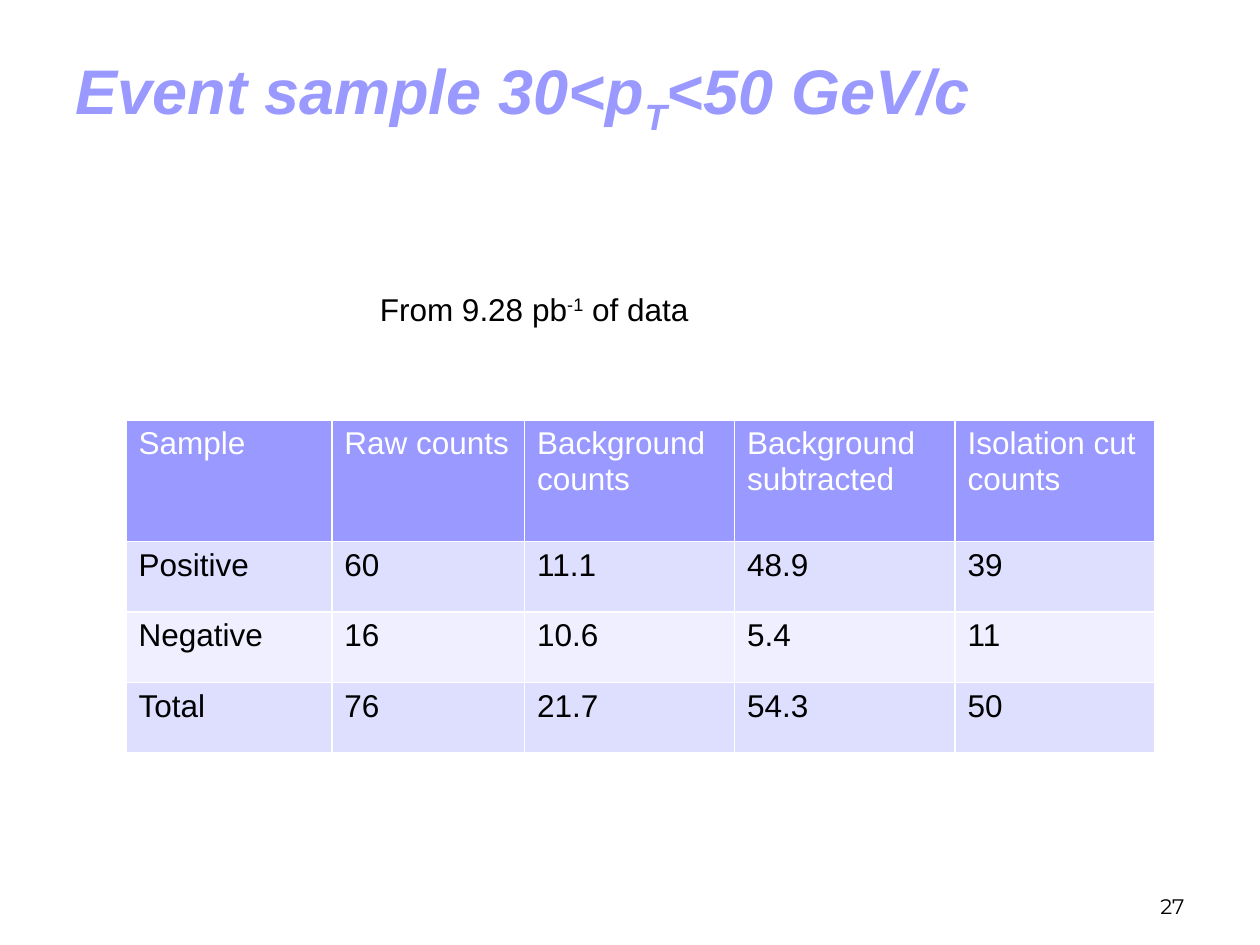
"""Build the event sample slide with its table of counts."""
import pptx
import pptx.dml.color
import pptx.enum.text
import pptx.oxml
import pptx.oxml.ns
import pptx.util

Pt = pptx.util.Pt
ANCHOR = pptx.enum.text.MSO_ANCHOR
ALIGN = pptx.enum.text.PP_ALIGN


def color(value):
    return pptx.dml.color.RGBColor.from_string(value)


class SlideBuilder:
    accent, white, black = "9999FF", "FFFFFF", "000000"
    bands = ("DEDEFF", "EFEFFF")
    body = {"name": "Arial", "size": Pt(18), "bold": False}
    heading = {"name": "Arial", "size": Pt(36), "bold": True, "italic": True}
    numbering = {"name": "Montserrat", "size": Pt(12)}

    def __init__(self, deck):
        self.slide = deck.slides.add_slide(deck.slide_layouts[5])

    def fill_text(self, frame, pieces, style, ink, align=ALIGN.LEFT):
        paragraph = frame.paragraphs[0]
        paragraph.alignment = align
        for words, baseline in pieces:
            run = paragraph.add_run()
            run.text = words
            for key, value in style.items():
                setattr(run.font, key, value)
            run.font.color.rgb = color(ink)
            if baseline:
                run.font._element.set("baseline", str(baseline * 1000))

    def title(self, pieces, left, top, width, height):
        heading = self.slide.shapes.title
        place = {"left": left, "top": top, "width": width, "height": height}
        for key, value in place.items():
            setattr(heading, key, Pt(value))
        frame = heading.text_frame
        layout = {"word_wrap": True, "vertical_anchor": ANCHOR.TOP,
                  "margin_top": Pt(8), "auto_size": pptx.enum.text.MSO_AUTO_SIZE.NONE}
        for key, value in layout.items():
            setattr(frame, key, value)
        self.fill_text(frame, pieces, self.heading, self.accent)

    def text(self, pieces, place, style, align=ALIGN.LEFT, anchor=ANCHOR.TOP):
        frame = self.slide.shapes.add_textbox(*map(Pt, place)).text_frame
        frame.word_wrap = True
        frame.vertical_anchor = anchor
        self.fill_text(frame, pieces, style, self.black, align)

    def border(self, cell):
        properties = cell._tc.get_or_add_tcPr()
        for position, side in enumerate(("lnL", "lnR", "lnT", "lnB")):
            properties.insert(position, pptx.oxml.parse_xml(
                f'<a:{side} {pptx.oxml.ns.nsdecls("a")} w="{Pt(1)}"><a:solidFill>'
                f'<a:srgbClr val="{self.white}"/></a:solidFill></a:{side}>'))

    def table(self, rows, left, top, widths, heights):
        counts = self.slide.shapes.add_table(
            len(rows), len(widths), Pt(left), Pt(top),
            Pt(sum(widths)), Pt(sum(heights))).table
        for column, width in zip(counts.columns, widths):
            column.width = Pt(width)
        for index, (row, height) in enumerate(zip(rows, heights)):
            counts.rows[index].height = Pt(height)
            fill = self.bands[(index - 1) % 2] if index else self.accent
            ink = self.black if index else self.white
            for cell, words in zip(counts.rows[index].cells, row):
                cell.fill.solid()
                cell.fill.fore_color.rgb = color(fill)
                self.border(cell)
                self.fill_text(cell.text_frame, [(words, 0)], self.body, ink)


def main():
    deck = pptx.Presentation()
    deck.slide_width, deck.slide_height = Pt(720), Pt(540)
    builder = SlideBuilder(deck)
    builder.title([("Event sample 30<p", 0), ("T", -25), ("<50 GeV/c", 0)],
                  36, 21.6, 648, 90)
    builder.table([
        ["Sample", "Raw counts", "Background counts",
         "Background subtracted", "Isolation cut counts"],
        ["Positive", "60", "11.1", "48.9", "39"],
        ["Negative", "16", "10.6", "5.4", "11"],
        ["Total", "76", "21.7", "54.3", "50"],
    ], 72, 240, [117.6, 110.2, 120, 126, 114], [69.5, 40.2, 40.2, 40.2])
    builder.text([("From 9.28 pb", 0), ("-1", 30), (" of data", 0)],
                 (210, 162, 261, 37), builder.body)
    builder.text([("27", 0)], (516, 508, 168, 20.4), builder.numbering,
                 ALIGN.RIGHT, ANCHOR.BOTTOM)
    deck.save("out.pptx")


if __name__ == "__main__":
    main()
